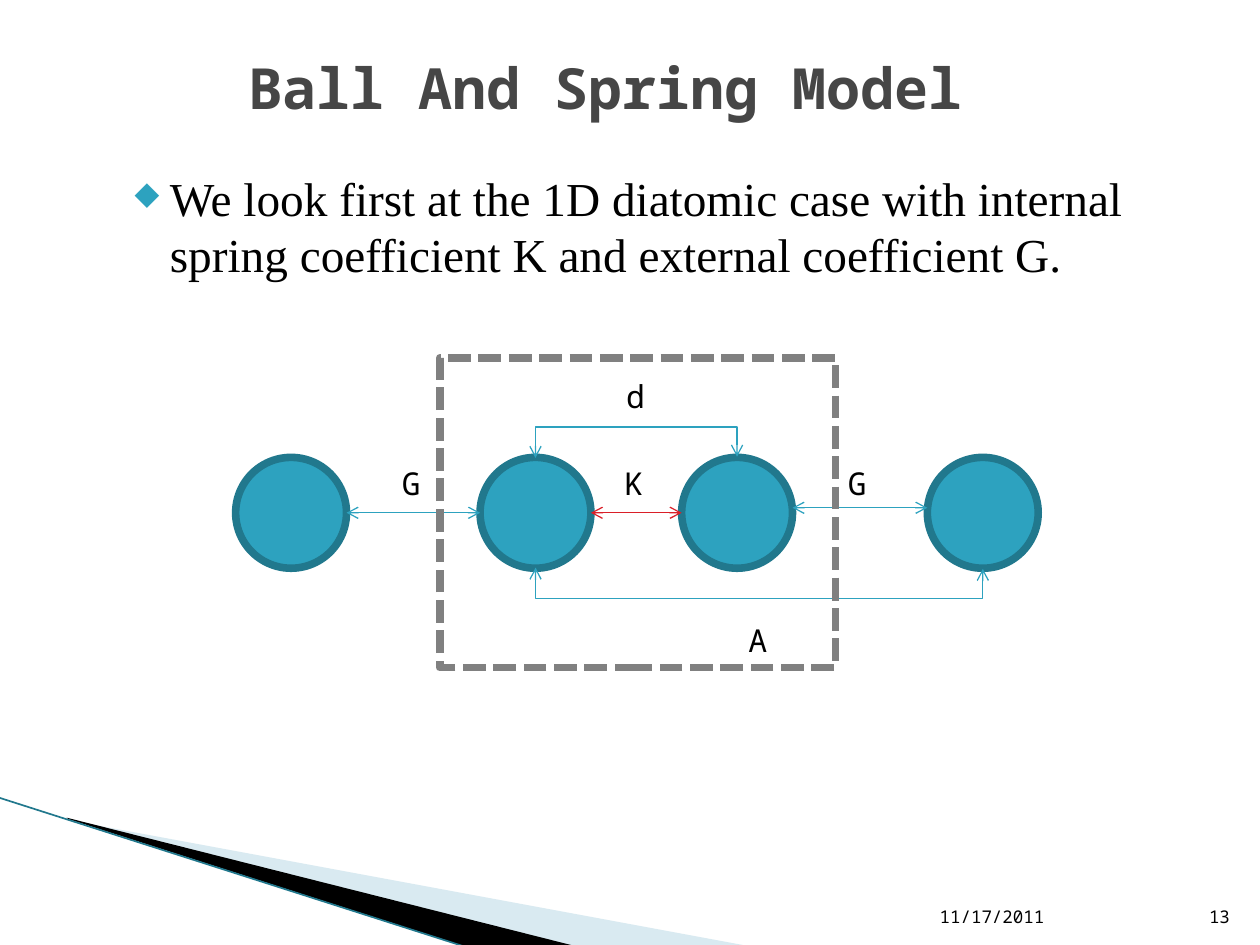
from dataclasses import dataclass
from lxml.etree import SubElement
from pptx import Presentation
from pptx.dml.color import RGBColor
from pptx.enum.dml import MSO_LINE
from pptx.enum.shapes import MSO_CONNECTOR, MSO_SHAPE
from pptx.enum.text import MSO_ANCHOR, PP_ALIGN
from pptx.oxml.ns import qn
from pptx.util import Inches, Pt


@dataclass(frozen=True)
class Theme:
    mono: str = "Noto Sans Mono"
    serif: str = "Times New Roman"
    black: str = "000000"
    title: str = "464646"
    teal: str = "2DA2BF"
    dark_teal: str = "21788D"
    pale_blue: str = "A0CBDC"
    red: str = "DA1F28"
    gray: str = "808080"
    title_size: float = 32.4
    body_size: float = 27
    label_size: float = 18
    footer_size: float = 10
    thin: float = 0.75
    thick: float = 4.33


@dataclass(frozen=True)
class Box:
    left: float
    top: float
    width: float
    height: float

    def lengths(self) -> tuple:
        return tuple(Inches(value) for value in (self.left, self.top, self.width, self.height))


@dataclass(frozen=True)
class Label:
    text: str
    left: float
    top: float


@dataclass(frozen=True)
class Spring:
    start: float
    end: float
    height: float
    color: str


@dataclass(frozen=True)
class Bracket:
    start: float
    end: float
    height: float
    rotation: int
    flip_vertical: bool


THEME = Theme()
BALL_SIZE = 0.88
BALL_TOP = 3.63
BALL_LEFTS = (1.87, 3.81, 5.41, 7.36)
BALL_MIDDLE = BALL_TOP + BALL_SIZE / 2
BALL_CENTERS = tuple(left + BALL_SIZE / 2 for left in BALL_LEFTS)
BRACKET_DEPTH = 0.25
BRACKET_STEP = 0.01
SPRINGS = (
    Spring(BALL_LEFTS[0] + BALL_SIZE, BALL_LEFTS[1], BALL_MIDDLE, THEME.teal),
    Spring(BALL_LEFTS[2] + BALL_SIZE, BALL_LEFTS[3], 4.03, THEME.teal),
    Spring(BALL_LEFTS[1] + BALL_SIZE, BALL_LEFTS[2], BALL_MIDDLE, THEME.red),
)
BRACKETS = (
    Bracket(BALL_CENTERS[1], BALL_CENTERS[3], BALL_TOP + BALL_SIZE, 270, False),
    Bracket(BALL_CENTERS[1], BALL_CENTERS[2], BALL_TOP, 90, True),
)
LABELS = (
    Label("K", 4.86, 3.63),
    Label("G", 6.63, 3.63),
    Label("G", 3.09, 3.63),
    Label("A", 5.84, 4.88),
    Label("d", 4.87, 2.94),
)


def rgb(color: str) -> RGBColor:
    return RGBColor.from_string(color)


def write(text_frame, text: str, size: float, font_name: str = THEME.mono,
          color: str = THEME.black, bold: bool = False) -> None:
    text_frame.text = text
    font = text_frame.paragraphs[0].runs[0].font
    font.name = font_name
    font.size = Pt(size)
    font.bold = bold
    font.color.rgb = rgb(color)


def add_text(slide, text: str, box: Box, size: float, wrap: bool = True,
             font_name: str = THEME.mono):
    text_frame = slide.shapes.add_textbox(*box.lengths()).text_frame
    text_frame.word_wrap = wrap
    write(text_frame, text, size, font_name)
    return text_frame


def add_body(slide, text: str) -> None:
    text_frame = add_text(slide, text, Box(0.85, 1.24, 8.88, 5.73), THEME.body_size,
                          font_name=THEME.serif)
    text_frame.margin_top = Inches(0.1)
    paragraph = text_frame.paragraphs[0]
    paragraph.space_after = Pt(6)
    properties = paragraph._p.get_or_add_pPr()
    properties.set("marL", str(Inches(0.4)))
    properties.set("indent", str(Inches(-0.28)))
    bullet_color = SubElement(properties, qn("a:buClr"))
    SubElement(bullet_color, qn("a:srgbClr"), val=THEME.teal)
    SubElement(properties, qn("a:buSzPct"), val="68000")
    SubElement(properties, qn("a:buChar"), char="◆")


def add_footer(slide, text: str, box: Box, alignment: PP_ALIGN) -> None:
    text_frame = add_text(slide, text, box, THEME.footer_size)
    text_frame.vertical_anchor = MSO_ANCHOR.BOTTOM
    text_frame.paragraphs[0].alignment = alignment


def add_wedge(slide, points: tuple, color: str, opacity: int = 100) -> None:
    start, *others = [(Inches(x), Inches(y)) for x, y in points]
    builder = slide.shapes.build_freeform(*start)
    builder.add_line_segments(others, close=True)
    shape = builder.convert_to_shape()
    shape.shadow.inherit = False
    shape.fill.solid()
    shape.fill.fore_color.rgb = rgb(color)
    shape.line.fill.background()
    if opacity < 100:
        color_element = shape.element.spPr.find(qn("a:solidFill")).find(qn("a:srgbClr"))
        SubElement(color_element, qn("a:alpha"), val=str(opacity * 1000))


def add_line(slide, kind: MSO_CONNECTOR, start: tuple, end: tuple, color: str,
             width: float = THEME.thin, arrows: bool = True):
    connector = slide.shapes.add_connector(kind, *(Inches(value) for value in start + end))
    connector.line.color.rgb = rgb(color)
    connector.line.width = Pt(width)
    if arrows:
        line = connector.line._get_or_add_ln()
        for tag in ("a:headEnd", "a:tailEnd"):
            SubElement(line, qn(tag), type="arrow")
    SubElement(connector.element.spPr, qn("a:effectLst"))
    return connector


def add_bracket(slide, bracket: Bracket) -> None:
    center = (bracket.start + bracket.end) / 2
    half_span = (bracket.end - bracket.start) / 2
    half_step = BRACKET_STEP / 2
    connector = add_line(slide, MSO_CONNECTOR.ELBOW,
                         (center - half_step, bracket.height - half_span),
                         (center + half_step, bracket.height + half_span), THEME.teal)
    properties = connector.element.spPr
    transform = properties.find(qn("a:xfrm"))
    transform.set("rot", str(bracket.rotation * 60000))
    transform.set("flipH", "1")
    if bracket.flip_vertical:
        transform.set("flipV", "1")
    geometry = properties.find(qn("a:prstGeom"))
    adjustments = geometry.find(qn("a:avLst"))
    if adjustments is None:
        adjustments = SubElement(geometry, qn("a:avLst"))
    bend = round(BRACKET_DEPTH / BRACKET_STEP * 100000)
    SubElement(adjustments, qn("a:gd"), name="adj1", fmla=f"val {bend}")


def add_outlined(slide, kind: MSO_SHAPE, box: Box, line_color: str):
    shape = slide.shapes.add_shape(kind, *box.lengths())
    shape.shadow.inherit = False
    shape.line.color.rgb = rgb(line_color)
    shape.line.width = Pt(THEME.thick)
    return shape


def main() -> None:
    presentation = Presentation()
    presentation.slide_width, presentation.slide_height = Inches(10), Inches(7.5)
    slide = presentation.slides.add_slide(presentation.slide_layouts[5])

    add_wedge(slide, ((0.55, 6.51), (5.95, 7.51), (4.56, 7.51), (0.55, 6.5)), THEME.pale_blue, 40)
    add_wedge(slide, ((0.53, 6.49), (4.57, 7.51), (3.72, 7.52), (0.54, 6.5)), THEME.black)
    add_line(slide, MSO_CONNECTOR.STRAIGHT, (-0.01, 6.33), (3.71, 7.52), THEME.dark_teal,
             0.95, arrows=False)

    title = slide.shapes.title
    title.left, title.top, title.width, title.height = Box(0.47, 0.42, 8.68, 0.54).lengths()
    write(title.text_frame, "Ball And Spring Model", THEME.title_size, color=THEME.title, bold=True)
    title.text_frame.vertical_anchor = MSO_ANCHOR.MIDDLE
    title.text_frame.paragraphs[0].alignment = PP_ALIGN.CENTER
    add_body(slide, "We look first at the 1D diatomic case with internal spring coefficient K "
                    "and external coefficient G.")
    add_footer(slide, "11/17/2011", Box(7.36, 7.01, 2.1, 0.4), PP_ALIGN.LEFT)
    add_footer(slide, "13", Box(9.46, 7.01, 0.4, 0.4), PP_ALIGN.RIGHT)

    for left in BALL_LEFTS:
        ball = add_outlined(slide, MSO_SHAPE.OVAL, Box(left, BALL_TOP, BALL_SIZE, BALL_SIZE),
                            THEME.dark_teal)
        ball.fill.solid()
        ball.fill.fore_color.rgb = rgb(THEME.teal)
    for spring in SPRINGS:
        add_line(slide, MSO_CONNECTOR.STRAIGHT, (spring.start, spring.height),
                 (spring.end, spring.height), spring.color)
    for bracket in BRACKETS:
        add_bracket(slide, bracket)
    for label in LABELS:
        add_text(slide, label.text, Box(label.left, label.top, 0.38, 0.4), THEME.label_size, wrap=False)
    unit_cell = add_outlined(slide, MSO_SHAPE.RECTANGLE, Box(3.49, 2.84, 3.14, 2.46), THEME.gray)
    unit_cell.fill.background()
    unit_cell.line.dash_style = MSO_LINE.SQUARE_DOT
    presentation.save("out.pptx")


if __name__ == "__main__":
    main()
